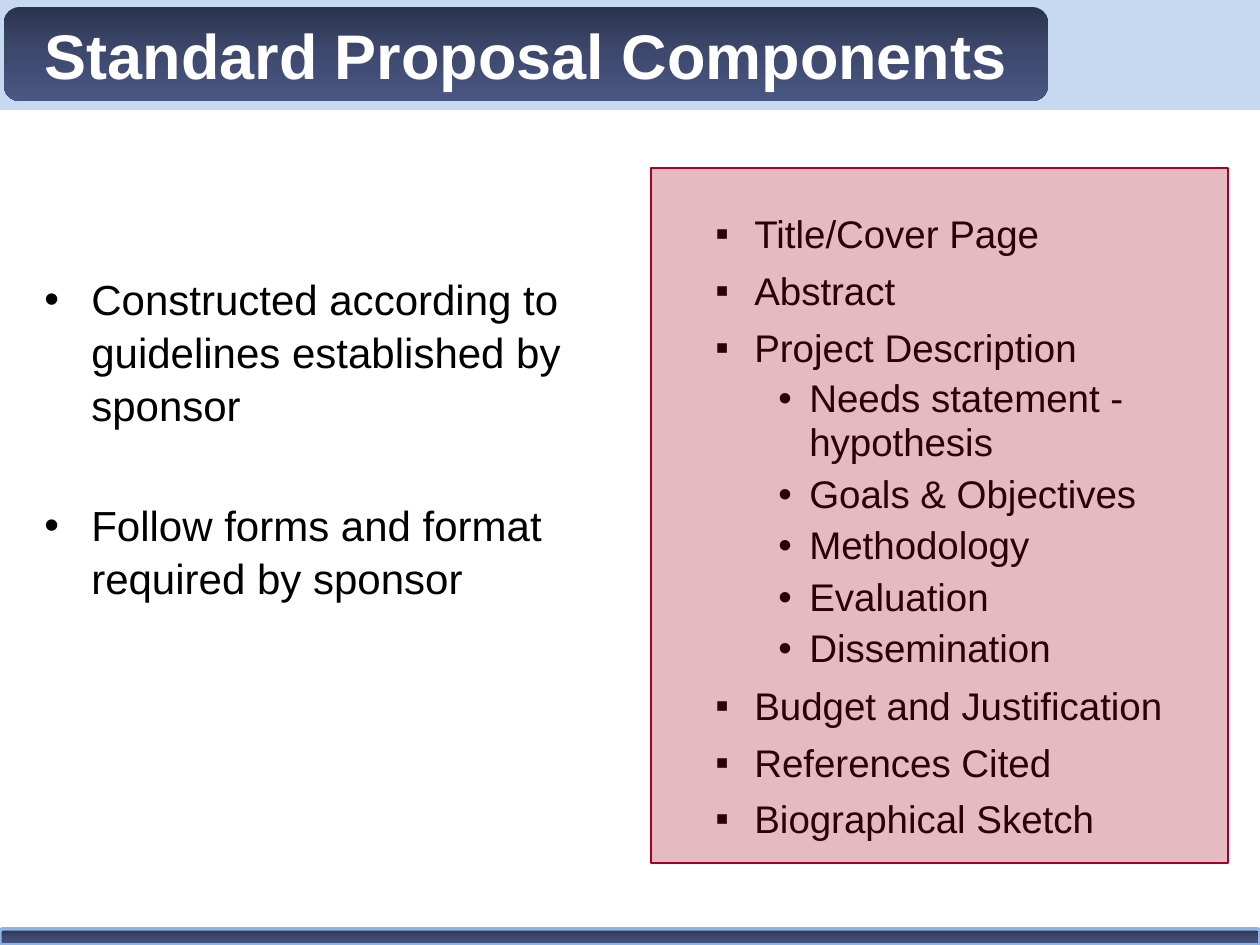
from copy import deepcopy

from lxml.etree import SubElement
from pptx import Presentation
from pptx.dml.color import RGBColor
from pptx.enum.shapes import MSO_SHAPE as Shape
from pptx.enum.text import MSO_ANCHOR as Anchor, PP_ALIGN as Align
from pptx.oxml.ns import qn
from pptx.util import Pt

PX = 914400 / 126
COLORS = {"band": "C6D9F1", "edge": "8EB4E3", "panel": "A50021",
          "text": "000000", "title": "FFFFFF"}
NAVY_STOPS = [(0, "2B344D"), (0.5, "3E496E"), (1, "495783")]
# indent and hanging in px, line spacing, space before in pt
LEVELS = {
    "guideline": ("•", 47, 47, 1.05, 38.5, 24),
    "component": ("▪", 102, 39, 1.05, 4.7, 22),
    "section": ("•", 157, 31, 0.95, 4.4, 22),
}
GUIDELINES = [
    ("guideline", "Constructed according to guidelines established by sponsor"),
    ("guideline", "Follow forms and format required by sponsor"),
]
COMPONENTS = [
    ("component", "Title/Cover Page"),
    ("component", "Abstract"),
    ("component", "Project Description"),
    ("section", "Needs statement - hypothesis"),
    ("section", "Goals & Objectives"),
    ("section", "Methodology"),
    ("section", "Evaluation"),
    ("section", "Dissemination"),
    ("component", "Budget and Justification"),
    ("component", "References Cited"),
    ("component", "Biographical Sketch"),
]


def emu(*lengths):
    return [round(length * PX) for length in lengths]


def add_block(kind, box, color=None):
    """Add a borderless shape, navy gradient unless a color is given."""
    block = slide.shapes.add_shape(kind, *emu(*box))
    block.shadow.inherit = False
    block.line.fill.background()
    if color:
        block.fill.solid()
        block.fill.fore_color.rgb = RGBColor.from_string(COLORS[color])
        return block
    block.fill.gradient()
    block.fill.gradient_angle = 270
    stop_list = block._element.spPr.find(".//" + qn("a:gsLst"))
    stop_list.insert(1, deepcopy(stop_list[0]))
    for stop, (position, tone) in zip(block.fill.gradient_stops, NAVY_STOPS):
        stop.position = position
        stop.color.rgb = RGBColor.from_string(tone)
    return block


prs = Presentation()
prs.slide_width, prs.slide_height = emu(1260, 945)
slide = prs.slides.add_slide(prs.slide_layouts[5])

# Bullet columns
for box, items in [((32, 265, 557, 388), GUIDELINES),
                   ((640, 202, 557, 655), COMPONENTS)]:
    frame = slide.shapes.add_textbox(*emu(*box)).text_frame
    frame.word_wrap = True
    for i, (level, wording) in enumerate(items):
        bullet, indent, hanging, spacing, before, size = LEVELS[level]
        paragraph = frame.add_paragraph() if i else frame.paragraphs[0]
        properties = paragraph._p.get_or_add_pPr()
        left, first = emu(indent, -hanging)
        properties.set("marL", str(left))
        properties.set("indent", str(first))
        SubElement(properties, qn("a:buFont"), typeface="Arial")
        SubElement(properties, qn("a:buChar"), char=bullet)
        paragraph.line_spacing = spacing
        paragraph.space_before = Pt(before if i else 0)
        run = paragraph.add_run()
        run.text = wording
        run.font.name = "Arial"
        run.font.size = Pt(size)
        run.font.color.rgb = RGBColor.from_string(COLORS["text"])

# Translucent panel over the component list
panel = add_block(Shape.RECTANGLE, (651, 168, 577, 695), "panel")
panel_color = panel._element.spPr.find(".//" + qn("a:srgbClr"))
SubElement(panel_color, qn("a:alpha"), val="27000")
panel.line.color.rgb = RGBColor.from_string(COLORS["panel"])
panel.line.width = Pt(0.75)

# Footer bar and header
footer = add_block(Shape.ROUNDED_RECTANGLE, (0, 929, 1260, 16))
footer.line.color.rgb = RGBColor.from_string(COLORS["edge"])
footer.line.width = Pt(2)
add_block(Shape.RECTANGLE, (0, 0, 1260, 110), "band")
title_box = (4, 7, 1044, 94)
add_block(Shape.ROUNDED_RECTANGLE, title_box)

title = slide.shapes.title
title.left, title.top, title.width, title.height = emu(*title_box)
slide.shapes._spTree.append(title._element)
title.text_frame.vertical_anchor = Anchor.MIDDLE
heading = title.text_frame.paragraphs[0]
heading.alignment = Align.CENTER
run = heading.add_run()
run.text = "Standard Proposal Components"
run.font.name = "Arial"
run.font.size = Pt(36)
run.font.bold = True
run.font.color.rgb = RGBColor.from_string(COLORS["title"])

prs.save("out.pptx")
